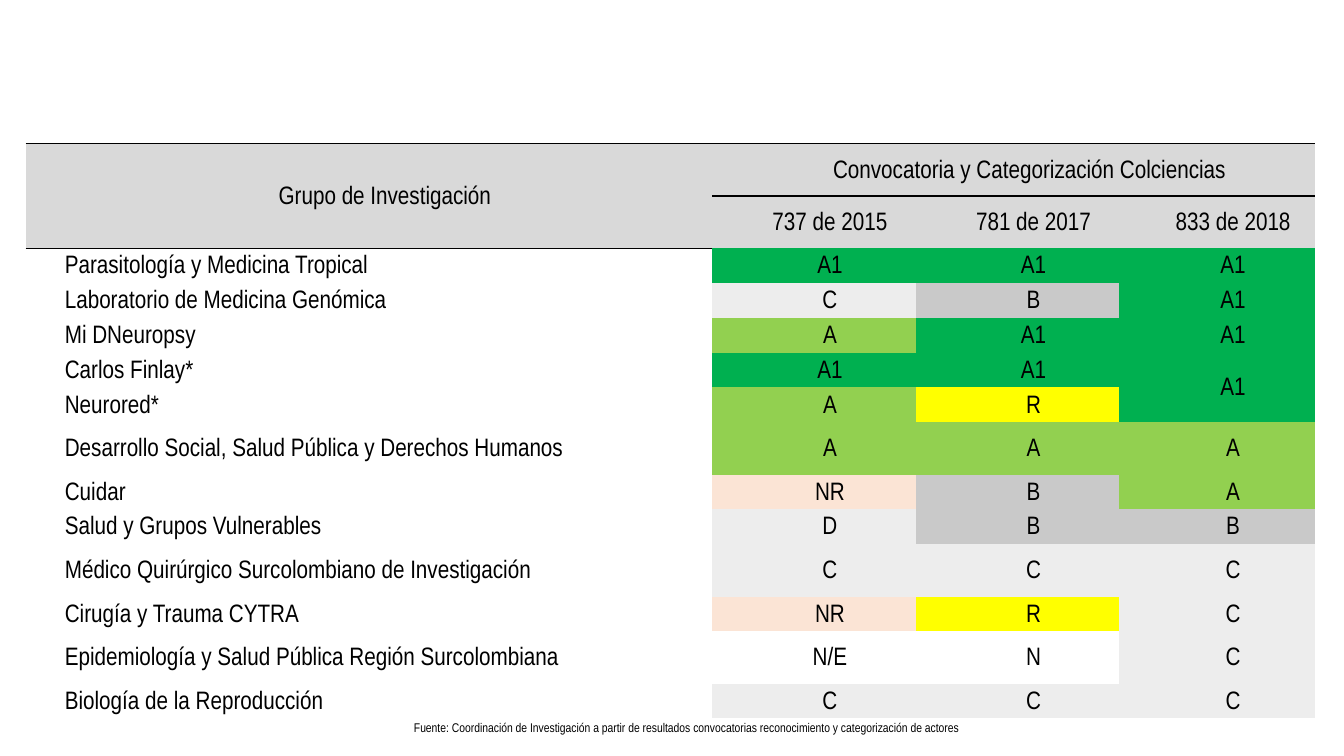
from pptx import Presentation
from pptx import util as u
from pptx.dml.color import RGBColor
from pptx.enum import text
from pptx.oxml import parse_xml
from pptx.oxml.ns import nsdecls, qn

BLACK = RGBColor(0x00, 0x00, 0x00)
HEADER_GRAY = RGBColor(0xD9, 0xD9, 0xD9)
DARK_GREEN = RGBColor(0x00, 0xB0, 0x50)
LIGHT_GREEN = RGBColor(0x92, 0xD0, 0x50)
MID_GRAY = RGBColor(0xC9, 0xC9, 0xC9)
PALE_GRAY = RGBColor(0xED, 0xED, 0xED)
YELLOW = RGBColor(0xFF, 0xFF, 0x00)
PEACH = RGBColor(0xFB, 0xE4, 0xD5)

CATEGORY_FILLS = {
    "A1": DARK_GREEN, "A": LIGHT_GREEN, "B": MID_GRAY, "C": PALE_GRAY,
    "D": PALE_GRAY, "R": YELLOW, "NR": PEACH,
}
NO_GRID_STYLE = "{2D5ABB26-0587-4C30-8999-92F81FD0307C}"

CALLS = ["737 de 2015", "781 de 2017", "833 de 2018"]
GROUPS = [
    ("Parasitología y Medicina Tropical", "A1", "A1", "A1"),
    ("Laboratorio de Medicina Genómica", "C", "B", "A1"),
    ("Mi DNeuropsy", "A", "A1", "A1"),
    ("Carlos Finlay*", "A1", "A1", "A1"),
    ("Neurored*", "A", "R", ""),
    ("Desarrollo Social, Salud Pública y Derechos Humanos", "A", "A", "A"),
    ("Cuidar", "NR", "B", "A"),
    ("Salud y Grupos Vulnerables", "D", "B", "B"),
    ("Médico Quirúrgico Surcolombiano de Investigación", "C", "C", "C"),
    ("Cirugía y Trauma CYTRA", "NR", "R", "C"),
    ("Epidemiología y Salud Pública Región Surcolombiana", "N/E", "N", "C"),
    ("Biología de la Reproducción", "C", "C", "C"),
]
SOURCE = ("Fuente: Coordinación de Investigación a partir de resultados "
          "convocatorias reconocimiento y categorización de actores")

# Percentages of the slide's width and height
COLUMN_WIDTHS = [51.08, 15.15, 15.15, 14.55]
SHORT, TALL, FOOT = 4.6, 6.93, 2.53
TALL_GROUPS = {5, 8, 10}
FIRST_GROUP_ROW = 3
SOURCE_ROW = FIRST_GROUP_ROW + len(GROUPS)


class SlideBuilder:
    font_name = "Arial Narrow"
    font_size = 18
    line_spacing = 1.15
    indent = u.Inches(0.32)
    side_margin = u.Inches(0.07)

    def __init__(self, presentation):
        self.width = presentation.slide_width
        self.height = presentation.slide_height
        self.slide = presentation.slides.add_slide(presentation.slide_layouts[6])

    def across(self, percent):
        return round(self.width * percent / 100)

    def down(self, percent):
        return round(self.height * percent / 100)

    def table(self, left, top, columns, rows):
        """Add an unstyled table whose cells start empty and unfilled."""
        frame = self.slide.shapes.add_table(
            len(rows), len(columns), self.across(left), self.down(top),
            self.across(sum(columns)), self.down(sum(rows)))
        table = frame.table
        table.first_row = table.horz_banding = False
        table._tbl.tblPr.find(qn("a:tableStyleId")).text = NO_GRID_STYLE
        for column, width in zip(table.columns, columns):
            column.width = self.across(width)
        for row, height in zip(table.rows, rows):
            row.height = self.down(height)
        for cell in table.iter_cells():
            cell.margin_left = cell.margin_right = self.side_margin
            cell.margin_top = cell.margin_bottom = 0
            cell.vertical_anchor = text.MSO_ANCHOR.MIDDLE
            cell.fill.background()
        return table

    def cell(self, cell, words, fill=None, align=text.PP_ALIGN.CENTER, size=None):
        if fill is not None:
            cell.fill.solid()
            cell.fill.fore_color.rgb = fill
        cell.text_frame.text = words
        paragraph = cell.text_frame.paragraphs[0]
        paragraph.alignment = align
        paragraph.line_spacing = self.line_spacing
        properties = paragraph._p.get_or_add_pPr()
        properties.set("marL", str(self.indent))
        properties.set("indent", "0")
        for run in paragraph.runs:
            run.font.name = self.font_name
            run.font.size = u.Pt(size or self.font_size)
            run.font.color.rgb = BLACK

    def border(self, cell, side):
        """Draw a 1 pt line on one side of a cell: T or B."""
        line = parse_xml(
            f'<a:ln{side} {nsdecls("a")} w="{u.Pt(1)}"><a:solidFill>'
            f'<a:srgbClr val="{BLACK}"/></a:solidFill></a:ln{side}>')
        cell._tc.get_or_add_tcPr().insert(0, line)


def fill_header(builder, table):
    for column in range(len(COLUMN_WIDTHS)):
        builder.border(table.cell(0, column), "B")
        builder.border(table.cell(1, column), "T")
    table.cell(0, 0).merge(table.cell(0, 3))
    table.cell(1, 0).merge(table.cell(2, 0))
    table.cell(1, 1).merge(table.cell(1, 3))
    builder.cell(table.cell(1, 0), "Grupo de Investigación", HEADER_GRAY)
    builder.cell(table.cell(1, 1), "Convocatoria y Categorización Colciencias",
                 HEADER_GRAY)
    for column, call in enumerate(CALLS, 1):
        builder.cell(table.cell(2, column), call, HEADER_GRAY)


def fill_groups(builder, table):
    for row, (group, *categories) in enumerate(GROUPS, FIRST_GROUP_ROW):
        builder.cell(table.cell(row, 0), group, align=text.PP_ALIGN.JUSTIFY)
        for column, category in enumerate(categories, 1):
            if category:
                builder.cell(table.cell(row, column), category,
                             CATEGORY_FILLS.get(category))
            else:
                table.cell(row - 1, column).merge(table.cell(row, column))


def main():
    presentation = Presentation()
    presentation.slide_width = u.Inches(13.33)
    presentation.slide_height = u.Inches(7.5)
    builder = SlideBuilder(presentation)
    group_rows = [TALL if index in TALL_GROUPS else SHORT
                  for index in range(len(GROUPS))]
    table = builder.table(1.9, 14.4, COLUMN_WIDTHS,
                          [SHORT, TALL, TALL, *group_rows, FOOT])
    fill_header(builder, table)
    fill_groups(builder, table)
    table.cell(SOURCE_ROW, 0).merge(table.cell(SOURCE_ROW, 3))
    builder.cell(table.cell(SOURCE_ROW, 0), SOURCE, size=9)
    presentation.save("out.pptx")


if __name__ == "__main__":
    main()
